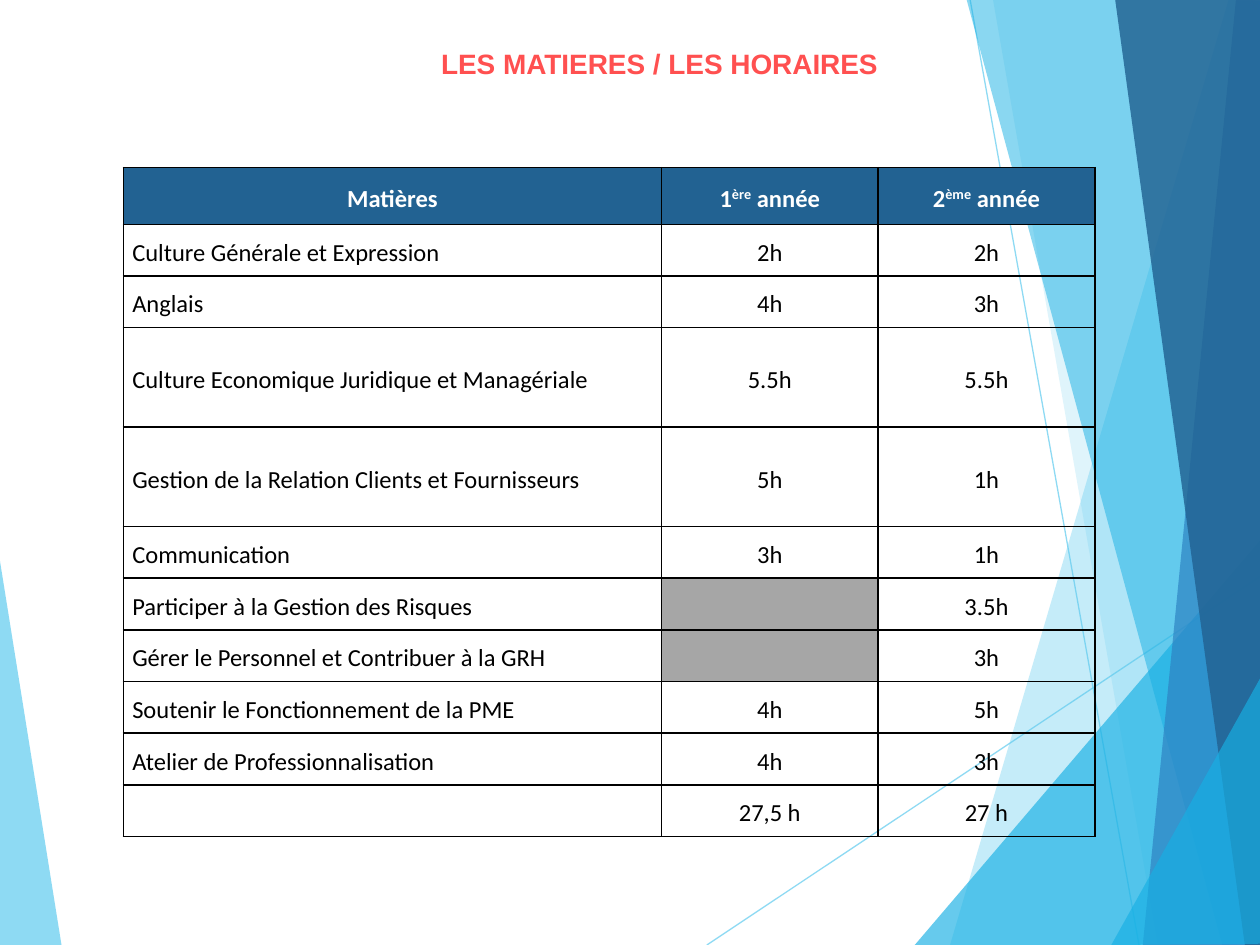
from lxml.etree import SubElement
from pptx import Presentation
from pptx.dml.color import RGBColor
from pptx.enum.shapes import MSO_CONNECTOR
from pptx.enum.text import MSO_ANCHOR, MSO_AUTO_SIZE, PP_ALIGN
from pptx.oxml.ns import qn
from pptx.util import Inches, Pt

COLORS = {
    "sky": "5FCBEF", "cyan": "17B0E4", "blue": "2E83C3", "navy": "226292",
    "coral": "FF5050", "gray": "A6A6A6", "white": "FFFFFF", "black": "000000",
}

RAYS = [((5.61, 7.5), (10.01, 4.57)), ((7.7, 0), (9.04, 7.5))]
LEFT_FACET = ("sky", 70, [(-0.01, 4.39), (0.49, 7.51), (-0.01, 7.5)])
RIGHT_FACETS = [
    ("sky", 36, [(9.75, 0), (7.54, 7.5), (10.02, 7.51), (10.01, 0.01)]),
    ("sky", 20, [(7.88, -0.01), (9.19, 7.5), (10.01, 7.5), (10.01, -0.01)]),
    ("cyan", 66, [(7.26, 7.5), (10, 4.29), (10.01, 7.5)]),
    ("cyan", 50, [(7.67, -0.01), (9.7, 7.5), (10.01, 7.49), (10.01, -0.01)]),
    ("blue", 70, [(9.81, -0.01), (9.07, 7.5), (10.01, 7.5), (10, -0.01)]),
    ("navy", 82, [(8.85, -0.01), (9.88, 7.5), (10.02, 7.5), (10, -0.01)]),
    ("cyan", 66, [(8.82, 7.5), (10.02, 5.35), (10.02, 7.49)]),
]

HEADER = [[("Matières", 0)],
          [("1", 0), ("ère", 30), (" année", 0)],
          [("2", 0), ("ème", 30), (" année", 0)]]
SUBJECTS = [
    ("Culture Générale et Expression", "2h", "2h"),
    ("Anglais", "4h", "3h"),
    ("Culture Economique Juridique et Managériale", "5.5h", "5.5h"),
    ("Gestion de la Relation Clients et Fournisseurs", "5h", "1h"),
    ("Communication", "3h", "1h"),
    ("Participer à la Gestion des Risques", None, "3.5h"),
    ("Gérer le Personnel et Contribuer à la GRH", None, "3h"),
    ("Soutenir le Fonctionnement de la PME", "4h", "5h"),
    ("Atelier de Professionnalisation", "4h", "3h"),
    ("", "27,5 h", "27 h"),
]
TALL_ROWS = (3, 4)


def rgb(name):
    return RGBColor.from_string(COLORS[name])


def add_text(paragraph, text, size=14, font="Calibri", color="black",
             bold=False, align=PP_ALIGN.CENTER, spacing=None, raised=0):
    paragraph.alignment = align
    paragraph.line_spacing = spacing
    run = paragraph.add_run()
    run.text = text
    run.font.size = Pt(size)
    run.font.name = font
    run.font.bold = bold
    run.font.color.rgb = rgb(color)
    if raised:
        run._r.get_or_add_rPr().set("baseline", str(raised * 1000))


def set_opacity(shape, percent):
    for color in shape._element.spPr.iter(qn("a:srgbClr")):
        SubElement(color, qn("a:alpha"), val=str(percent * 1000))


def add_facet(slide, left, top, color, opacity, points):
    corners = [(left + Inches(x), top + Inches(y)) for x, y in points]
    builder = slide.shapes.build_freeform(*corners[0])
    builder.add_line_segments(corners[1:], close=True)
    facet = builder.convert_to_shape()
    facet.shadow.inherit = False
    facet.fill.solid()
    facet.fill.fore_color.rgb = rgb(color)
    facet.line.fill.background()
    set_opacity(facet, opacity)


def add_ray(slide, left, top, start, end):
    ray = slide.shapes.add_connector(
        MSO_CONNECTOR.STRAIGHT,
        left + Inches(start[0]), top + Inches(start[1]),
        left + Inches(end[0]), top + Inches(end[1]))
    ray.line.color.rgb = rgb("sky")
    ray.line.width = Pt(0.75)
    set_opacity(ray, 70)
    SubElement(ray._element.spPr, qn("a:effectLst"))


def add_backdrop(slide, left, top):
    add_facet(slide, left, top, *LEFT_FACET)
    for start, end in RAYS:
        add_ray(slide, left, top, start, end)
    for facet in RIGHT_FACETS:
        add_facet(slide, left, top, *facet)


def place_title(slide, left, top, width, height):
    title = slide.shapes.title
    title.left, title.top, title.width, title.height = left, top, width, height
    title.text_frame.auto_size = MSO_AUTO_SIZE.NONE
    title.text_frame.vertical_anchor = MSO_ANCHOR.MIDDLE
    add_text(title.text_frame.paragraphs[0], "LES MATIERES / LES HORAIRES",
             size=16, font="Arial", color="coral", bold=True)


def format_cell(cell, fill=None):
    cell.vertical_anchor = MSO_ANCHOR.MIDDLE
    cell.margin_left = cell.margin_right = Inches(0.07)
    cell.margin_top = cell.margin_bottom = 0
    properties = cell._tc.get_or_add_tcPr()
    for side in ("lnL", "lnR", "lnT", "lnB"):
        border = SubElement(properties, qn(f"a:{side}"), w=str(Pt(1)))
        border_fill = SubElement(border, qn("a:solidFill"))
        SubElement(border_fill, qn("a:srgbClr"), val=COLORS["black"])
    if fill:
        cell.fill.solid()
        cell.fill.fore_color.rgb = rgb(fill)
    else:
        cell.fill.background()


def add_timetable(slide, left, top, width, height):
    timetable = slide.shapes.add_table(
        len(SUBJECTS) + 1, len(HEADER), left, top, width, height).table
    timetable.first_row = timetable.horz_banding = False
    for column, share in zip(timetable.columns, (4.27, 1.72, 1.72)):
        column.width = Inches(share)
    for index, row in enumerate(timetable.rows):
        row.height = Inches(0.45 if index == 0 else
                            0.79 if index in TALL_ROWS else 0.41)

    for cell, parts in zip(timetable.rows[0].cells, HEADER):
        format_cell(cell, "navy")
        for text, raised in parts:
            add_text(cell.text_frame.paragraphs[0], text, color="white",
                     bold=True, spacing=1.19, raised=raised)

    for index, subject in enumerate(SUBJECTS, start=1):
        for column, text in enumerate(subject):
            cell = timetable.cell(index, column)
            format_cell(cell, "gray" if text is None else None)
            if text:
                add_text(cell.text_frame.paragraphs[0], text, spacing=1.19,
                         align=PP_ALIGN.CENTER if column else PP_ALIGN.LEFT)


def main():
    deck = Presentation()
    deck.slide_width, deck.slide_height = Inches(10), Inches(7.5)
    slide = deck.slides.add_slide(deck.slide_layouts[5])
    add_backdrop(slide, 0, 0)
    place_title(slide, Inches(3.19), Inches(0.32), Inches(4.09), Inches(0.37))
    add_timetable(slide, Inches(0.98), Inches(1.33), Inches(7.7), Inches(5.29))
    deck.save("out.pptx")


if __name__ == "__main__":
    main()
